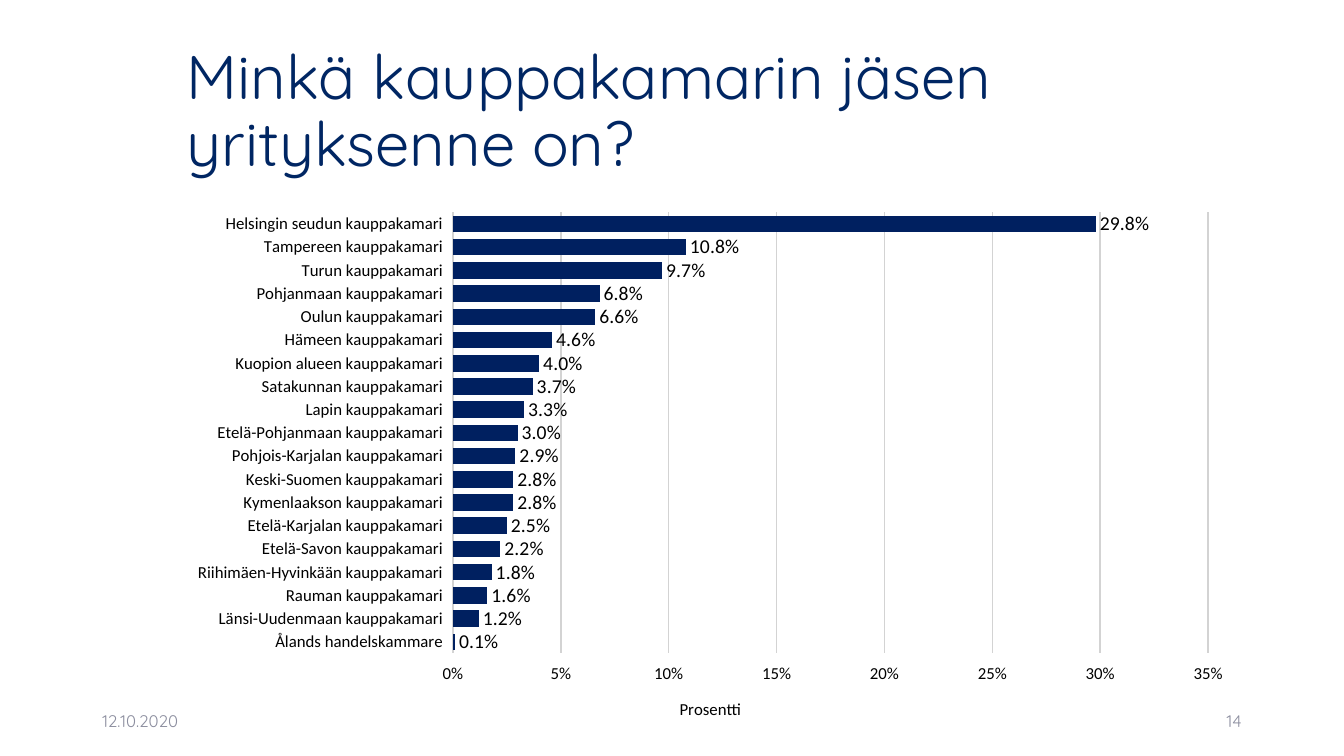
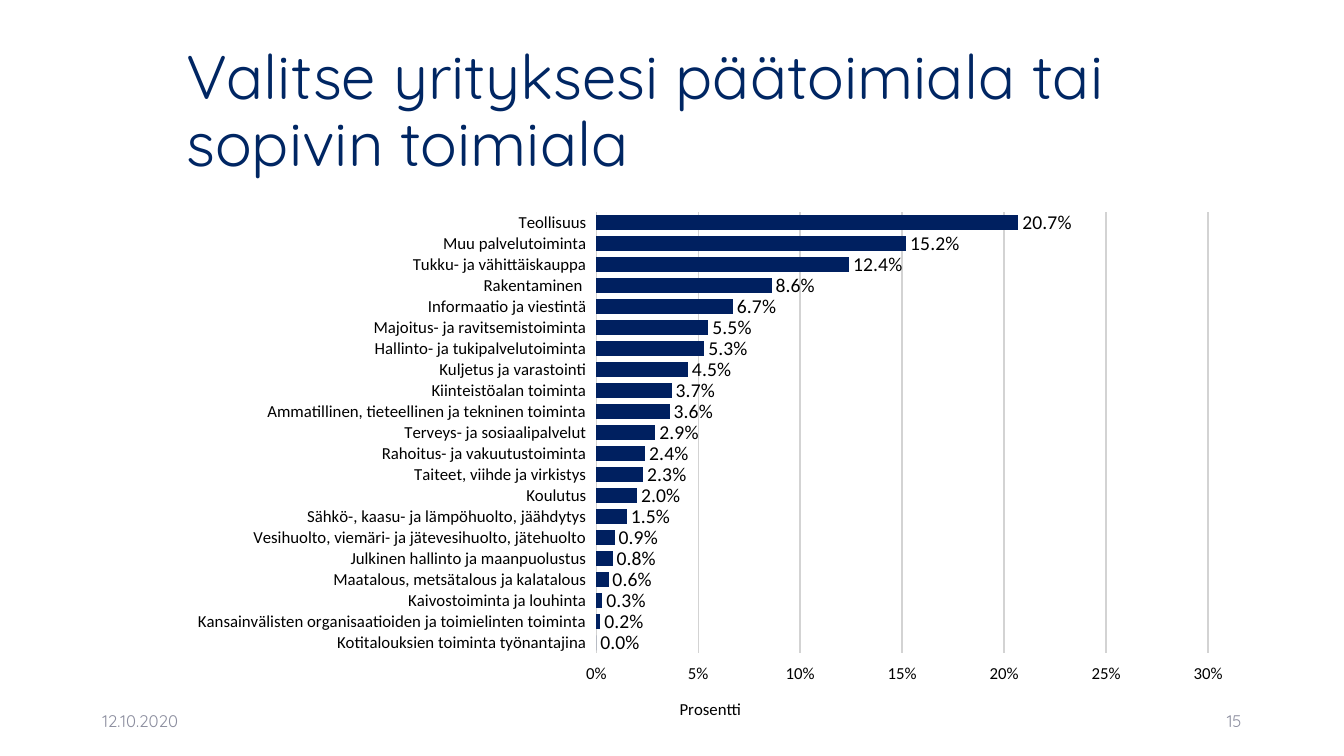
from pptx import Presentation
from pptx.chart.data import CategoryChartData
from pptx.dml.color import RGBColor
from pptx.enum.chart import XL_CHART_TYPE as CT, XL_LABEL_POSITION as LP, XL_TICK_MARK as TM
from pptx.enum.text import MSO_ANCHOR as MA, PP_ALIGN as PA
from pptx.util import Cm, Pt

# Shared style
TITLE, BAR, FOOTER, GRID, BLACK = "002663", "002060", "8C8E9F", "D3D3D3", "000000"
HEAD_FONT, CHART_FONT = "Quicksand", "Calibri"
LEFT, WIDTH = Cm(4.45), Cm(26.9)
DATE = "12.10.2020"


def style(font, size, color, name=CHART_FONT):
    font.size, font.name, font.bold = Pt(size), name, False
    font.color.rgb = RGBColor.from_string(color)


def add_text(s, text, x, y, w, h, size, color, align=PA.LEFT):
    tf = s.shapes.add_textbox(x, y, w, h).text_frame
    tf.word_wrap = True
    tf.vertical_anchor = MA.MIDDLE
    p = tf.paragraphs[0]
    p.text, p.alignment = text, align
    style(p.font, size, color, HEAD_FONT)
    return p


# Slide content: number, title, axis maximum, bars from top to bottom
slides = [
    (14, "Minkä kauppakamarin jäsen yrityksenne on?", 0.35, [
        ("Helsingin seudun kauppakamari", 0.298),
        ("Tampereen kauppakamari", 0.108),
        ("Turun kauppakamari", 0.097),
        ("Pohjanmaan kauppakamari", 0.068),
        ("Oulun kauppakamari", 0.066),
        ("Hämeen kauppakamari", 0.046),
        ("Kuopion alueen kauppakamari", 0.04),
        ("Satakunnan kauppakamari", 0.037),
        ("Lapin kauppakamari", 0.033),
        ("Etelä-Pohjanmaan kauppakamari", 0.03),
        ("Pohjois-Karjalan kauppakamari", 0.029),
        ("Keski-Suomen kauppakamari", 0.028),
        ("Kymenlaakson kauppakamari", 0.028),
        ("Etelä-Karjalan kauppakamari", 0.025),
        ("Etelä-Savon kauppakamari", 0.022),
        ("Riihimäen-Hyvinkään kauppakamari", 0.018),
        ("Rauman kauppakamari", 0.016),
        ("Länsi-Uudenmaan kauppakamari", 0.012),
        ("Ålands handelskammare", 0.001),
    ]),
    (15, "Valitse yrityksesi päätoimiala tai sopivin toimiala", 0.3, [
        ("Teollisuus", 0.207),
        ("Muu palvelutoiminta", 0.152),
        ("Tukku- ja vähittäiskauppa", 0.124),
        ("Rakentaminen ", 0.086),
        ("Informaatio ja viestintä", 0.067),
        ("Majoitus- ja ravitsemistoiminta", 0.055),
        ("Hallinto- ja tukipalvelutoiminta", 0.053),
        ("Kuljetus ja varastointi", 0.045),
        ("Kiinteistöalan toiminta", 0.037),
        ("Ammatillinen, tieteellinen ja tekninen toiminta", 0.036),
        ("Terveys- ja sosiaalipalvelut", 0.029),
        ("Rahoitus- ja vakuutustoiminta", 0.024),
        ("Taiteet, viihde ja virkistys", 0.023),
        ("Koulutus", 0.02),
        ("Sähkö-, kaasu- ja lämpöhuolto, jäähdytys", 0.015),
        ("Vesihuolto, viemäri- ja jätevesihuolto, jätehuolto", 0.009),
        ("Julkinen hallinto ja maanpuolustus", 0.008),
        ("Maatalous, metsätalous ja kalatalous", 0.006),
        ("Kaivostoiminta ja louhinta", 0.003),
        ("Kansainvälisten organisaatioiden ja toimielinten toiminta", 0.002),
        ("Kotitalouksien toiminta työnantajina", 0),
    ]),
]

prs = Presentation()
prs.slide_width, prs.slide_height = Cm(33.87), Cm(19.05)

for number, title, maximum, bars in slides:
    s = prs.slides.add_slide(prs.slide_layouts[6])

    # Title and footer
    p = add_text(s, title, LEFT, Cm(1.01), WIDTH, Cm(3.68), 44, TITLE)
    p.line_spacing = 0.9
    add_text(s, DATE, Cm(2.33), Cm(17.66), Cm(7.62), Cm(1.01), 12, FOOTER)
    add_text(s, str(number), Cm(23.92), Cm(17.66), Cm(7.62), Cm(1.01), 12, FOOTER, PA.RIGHT)

    # Bar chart, whose categories run from the bottom up
    data = CategoryChartData()
    data.categories = [name for name, _ in reversed(bars)]
    data.add_series("Series 1", [value for _, value in reversed(bars)])
    chart = s.shapes.add_chart(CT.BAR_CLUSTERED, LEFT, Cm(5.08), WIDTH, Cm(13.59), data).chart
    chart.has_legend = chart.has_title = False
    style(chart.font, 11, BLACK)

    plot = chart.plots[0]
    plot.gap_width = 40
    plot.vary_by_categories = False
    fill = plot.series[0].format.fill
    fill.solid()
    fill.fore_color.rgb = RGBColor.from_string(BAR)

    # Data labels
    plot.has_data_labels = True
    labels = plot.data_labels
    labels.show_value = True
    labels.position = LP.OUTSIDE_END
    labels.number_format, labels.number_format_is_linked = "0.0%", False
    style(labels.font, 14, BLACK)

    # Axes
    for axis in (chart.category_axis, chart.value_axis):
        axis.major_tick_mark = TM.OUTSIDE
        axis.format.line.fill.background()
        style(axis.tick_labels.font, 12, BLACK)
    axis = chart.value_axis
    axis.minimum_scale, axis.maximum_scale, axis.major_unit = 0, maximum, 0.05
    axis.tick_labels.number_format = "0%"
    axis.tick_labels.number_format_is_linked = False
    axis.has_major_gridlines = True
    line = axis.major_gridlines.format.line
    line.width = Pt(1)
    line.color.rgb = RGBColor.from_string(GRID)
    p = axis.axis_title.text_frame.paragraphs[0]
    p.text = "Prosentti"
    style(p.font, 12, BLACK)

prs.save("out.pptx")
